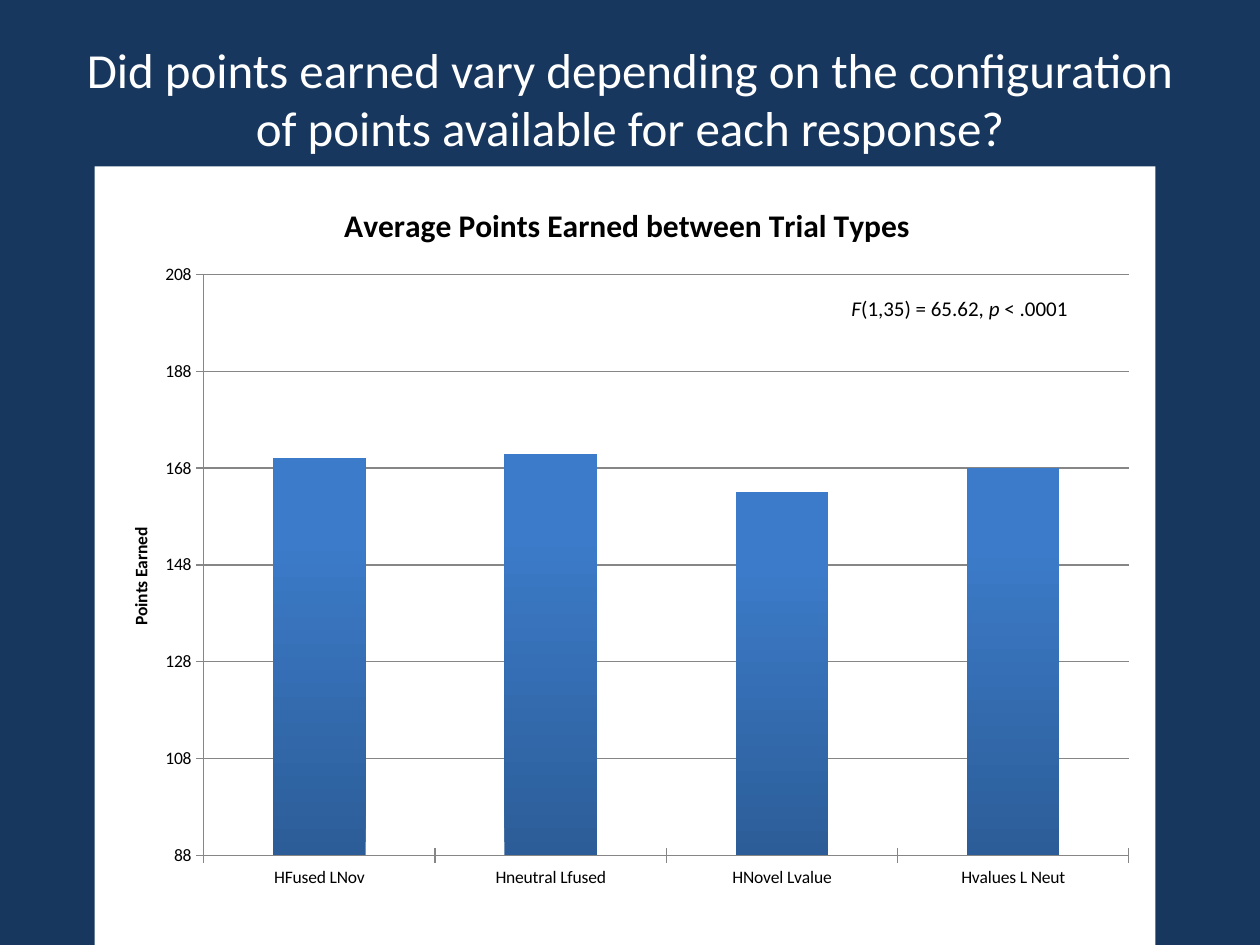
from lxml import etree
from pptx import Presentation, util as u
from pptx.chart.data import CategoryChartData
from pptx.dml.color import RGBColor
from pptx.enum import chart as ch, text
from pptx.oxml import parse_xml
from pptx.oxml.ns import nsdecls, qn

WIDTH, HEIGHT = u.Inches(10), u.Inches(7.5)
FONT = "Calibri"
NAVY, WHITE, BLACK, GREY = "17375E", "FFFFFF", "000000", "868686"
BAR_BASE, BAR_TOP = "2C5D98", "3C7BC9"

POINTS = {
    "HFused LNov": 170,
    "Hneutral Lfused": 171,
    "HNovel Lvalue": 163,
    "Hvalues L Neut": 168,
}


def rgb(hex_color):
    return RGBColor.from_string(hex_color)


def box(left, top, width, height):
    """Turn shares of the slide into a position and size."""
    return (int(left * WIDTH), int(top * HEIGHT),
            int(width * WIDTH), int(height * HEIGHT))


def write(paragraph, words, size, color=BLACK, bold=False, italic=False):
    run = paragraph.add_run()
    run.text = words
    font = run.font
    font.name, font.size = FONT, u.Pt(size)
    font.bold, font.italic = bold, italic
    font.color.rgb = rgb(color)


def set_layout(element, index, target=None, **shares):
    """Place a chart part by x, y, w and h as shares of the chart."""
    for old in element.findall(qn("c:layout")):
        element.remove(old)
    layout = etree.Element(qn("c:layout"))
    manual = etree.SubElement(layout, qn("c:manualLayout"))
    if target:
        etree.SubElement(manual, qn("c:layoutTarget"), val=target)
    for side in ("x", "y"):
        etree.SubElement(manual, qn(f"c:{side}Mode"), val="edge")
    for side, share in shares.items():
        etree.SubElement(manual, qn(f"c:{side}"), val=str(share))
    element.insert(index, layout)


def place_title(title, pieces, x, y, **style):
    """Fill a chart or axis title with (words, italic) pieces and place it."""
    paragraph = title.text_frame.paragraphs[0]
    for words, italic in pieces:
        write(paragraph, words, italic=italic, **style)
    set_layout(title._element, 1, x=x, y=y)


def fill_chart_area(chart, color):
    area = parse_xml(
        f'<c:spPr {nsdecls("c", "a")}><a:solidFill><a:srgbClr val="{color}"/>'
        "</a:solidFill><a:ln><a:noFill/></a:ln></c:spPr>")
    chart._chartSpace.find(qn("c:chart")).addnext(area)


def style_bars(plot):
    plot.gap_width = 150
    plot.vary_by_categories = False
    fill = plot.series[0].format.fill
    fill.gradient()
    fill.gradient_angle = 90
    base, top = fill.gradient_stops
    base.color.rgb, base.position = rgb(BAR_BASE), 0
    top.color.rgb, top.position = rgb(BAR_TOP), 0.8


def style_axes(chart):
    points = chart.value_axis
    points.minimum_scale, points.maximum_scale = 88, 208
    points.major_unit = 20
    points.has_major_gridlines = True
    points.major_gridlines.format.line.color.rgb = rgb(GREY)
    for axis in (chart.category_axis, points):
        axis.major_tick_mark = ch.XL_TICK_MARK.CROSS
        axis.format.line.color.rgb = rgb(GREY)


def add_heading(slide, words):
    frame = slide.shapes.add_textbox(*box(0.05, 0, 0.9, 0.207)).text_frame
    frame.word_wrap = True
    frame.vertical_anchor = text.MSO_ANCHOR.MIDDLE
    paragraph = frame.paragraphs[0]
    paragraph.alignment = text.PP_ALIGN.CENTER
    write(paragraph, words, 28, WHITE)


def add_points_chart(slide):
    data = CategoryChartData()
    data.categories = list(POINTS)
    data.add_series("Series 1", list(POINTS.values()))
    chart = slide.shapes.add_chart(
        ch.XL_CHART_TYPE.COLUMN_CLUSTERED,
        *box(0.075, 0.176, 0.842, 0.824), data).chart
    chart.has_legend = False
    chart.font.name, chart.font.size = FONT, u.Pt(10)
    chart.font.color.rgb = rgb(BLACK)
    fill_chart_area(chart, WHITE)
    style_bars(chart.plots[0])
    style_axes(chart)

    place_title(chart.chart_title,
                [("Average Points Earned between Trial Types", False)],
                0.23, 0.04, size=18, bold=True)
    place_title(chart.value_axis.axis_title, [("Points Earned", False)],
                0.03, 0.46, size=10, bold=True)
    place_title(chart.category_axis.axis_title,
                [("F", True), ("(1,35) = 65.62, ", False),
                 ("p", True), (" < .0001", False)],
                0.71, 0.16, size=12)
    plot_area = chart._chartSpace.find(qn("c:chart")).find(qn("c:plotArea"))
    set_layout(plot_area, 0, "inner", x=0.103, y=0.139, w=0.872, h=0.746)


def main():
    deck = Presentation()
    deck.slide_width, deck.slide_height = WIDTH, HEIGHT
    slide = deck.slides.add_slide(deck.slide_layouts[6])
    slide.background.fill.solid()
    slide.background.fill.fore_color.rgb = rgb(NAVY)
    add_heading(slide, "Did points earned vary depending on the configuration "
                       "of points available for each response?")
    add_points_chart(slide)
    deck.save("out.pptx")


if __name__ == "__main__":
    main()
